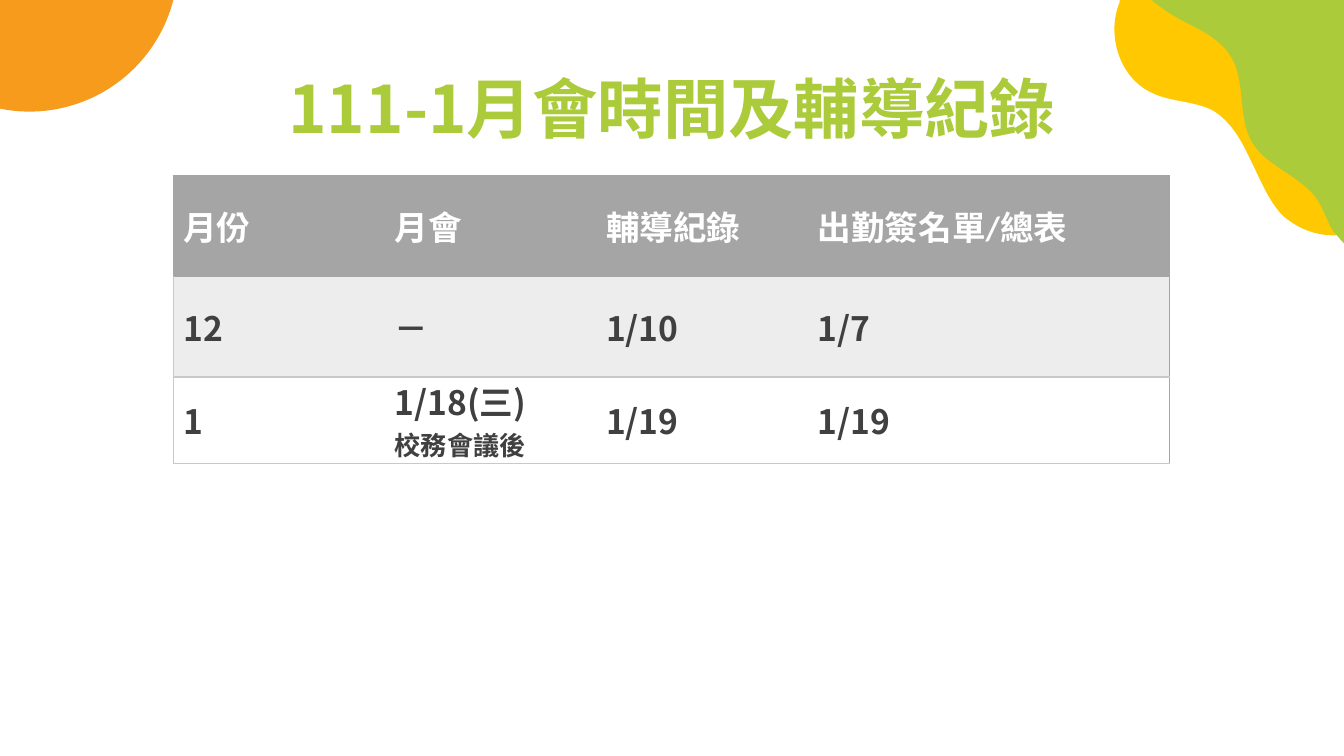
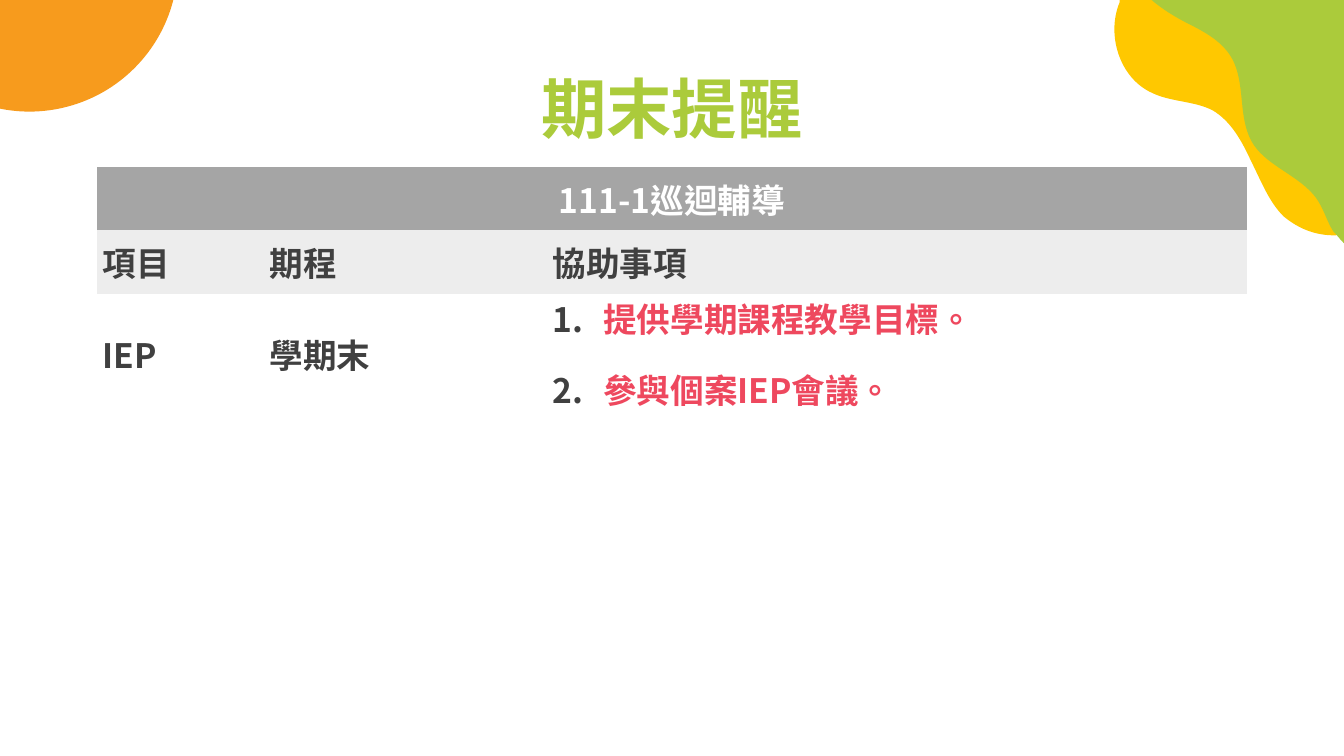
from dataclasses import dataclass

from pptx import Presentation
from pptx.dml.color import RGBColor as RGB
from pptx.enum.shapes import MSO_SHAPE as SHAPE
from pptx.enum.text import MSO_ANCHOR as ANCHOR, MSO_AUTO_SIZE as AUTOSIZE, PP_ALIGN as ALIGN
from pptx.oxml.ns import qn
from pptx.util import Pt
from lxml.etree import SubElement


@dataclass(frozen=True)
class Theme:
    green: str = "ABCB3B"
    yellow: str = "FFC800"
    orange: str = "F79B1D"
    gray: str = "A5A5A5"
    rule: str = "C9C9C9"
    band: str = "EDEDED"
    white: str = "FFFFFF"
    ink: str = "404040"
    red: str = "EE485E"
    noto: str = "Noto Sans CJK SC"
    calibri: str = "Calibri"
    title: int = 35
    body: int = 18
    small: int = 14
    no_style: str = "{2D5ABB26-0587-4C30-8999-92F81FD0307C}"


T = Theme()


def style_run(r, font, size, color):
    r.font.name, r.font.size, r.font.bold = font, Pt(size), True
    r.font.color.rgb = RGB.from_string(color)
    rPr = r._r.get_or_add_rPr()
    rPr.set("lang", "zh-TW")
    SubElement(rPr, qn("a:ea")).set("typeface", T.noto)


def fill_cell(cell, paragraphs, color, inset, align=ALIGN.JUSTIFY):
    """Each paragraph is a list of (text, font, size) runs."""
    cell.vertical_anchor = ANCHOR.MIDDLE
    cell.margin_left = cell.margin_right = Pt(inset)
    cell.margin_top = cell.margin_bottom = 0
    tf = cell.text_frame
    for i, runs in enumerate(paragraphs):
        p = tf.add_paragraph() if i else tf.paragraphs[0]
        p.alignment = align
        for text, font, size in runs:
            r = p.add_run()
            r.text = text
            style_run(r, font, size, color)


prs = Presentation()
prs.slide_width, prs.slide_height = Pt(720), Pt(405)
layout = prs.slide_layouts[5]

# Title position, shared through the layout
title = layout.placeholders[0]
title.left, title.top, title.width, title.height = Pt(57), Pt(34.9), Pt(606), Pt(45.4)

slides = []
for text in ("111-1月會時間及輔導紀錄", "期末提醒"):
    s = prs.slides.add_slide(layout)
    tf = s.shapes.title.text_frame
    tf.text = text
    tf.auto_size, tf.word_wrap, tf.vertical_anchor = AUTOSIZE.NONE, True, ANCHOR.MIDDLE
    tf.margin_left = tf.margin_right = tf.margin_top = tf.margin_bottom = Pt(7.2)
    p = tf.paragraphs[0]
    p.alignment = ALIGN.CENTER
    style_run(p.runs[0], T.noto, T.title, T.green)
    slides.append(s)
meeting, reminder = slides

# Corner blobs: start point, Bézier segments (two controls and an end), closing corners
blobs = [
    (T.yellow, (599.8, 0), [
        (599.8, 0.7, 599.8, 0.7, 599.8, 1.4), (592.6, 18.7, 599.8, 41.8, 617, 49.7),
        (627.1, 54.7, 639.4, 54, 649.4, 59), (659.5, 64.8, 665.3, 75.6, 670.3, 86.4),
        (675.4, 96.5, 679.7, 108, 687.6, 115.9), (696.2, 123.1, 706.3, 126.7, 717.1, 126),
        (717.8, 126, 719.3, 125.3, 720, 125.3)], [(720, 0)]),
    (T.green, (720, 0), [
        (622.8, 5, 630, 9.4, 637.2, 13), (644.4, 16.6, 652.3, 20.9, 657.4, 27.4),
        (668.9, 41.8, 661.7, 62.6, 671.8, 77.8), (679.7, 89.3, 696.2, 94.3, 704.9, 105.8),
        (709.2, 111.6, 710.6, 118.1, 714.2, 123.8), (716.4, 126, 717.8, 128.2, 720, 130.3)],
     [(617, 0)]),
]
decor = []
for color, start, curves, corners in blobs:
    # Green starts with its straight edge, yellow ends with it
    edge_first = color == T.green
    controls = [(c[k], c[k + 1]) for c in curves for k in (0, 2, 4)]
    points = corners + controls if edge_first else controls + corners
    builder = meeting.shapes.build_freeform(Pt(start[0]), Pt(start[1]))
    builder.add_line_segments([(Pt(x), Pt(y)) for x, y in points], close=True)
    sp = builder.convert_to_shape()
    # Every three control lines become one curve
    lines = list(sp.element.iter(qn("a:lnTo")))
    first = len(corners) if edge_first else 0
    for k in range(first, first + len(controls), 3):
        curve = SubElement(lines[k].getparent(), qn("a:cubicBezTo"))
        lines[k].addprevious(curve)
        for line in lines[k:k + 3]:
            curve.append(line[0])
            line.getparent().remove(line)
    decor.append((sp, color))

sun = meeting.shapes.add_shape(SHAPE.OVAL, Pt(-63.8), Pt(-99.4), Pt(159.2), Pt(159.2))
decor.append((sun, T.orange))

# The decoration belongs to the master, behind every slide
for sp, color in decor:
    sp.shadow.inherit = False
    sp.fill.solid()
    sp.fill.fore_color.rgb = RGB.from_string(color)
    sp.line.fill.background()
    prs.slide_master.shapes.element.append(sp.element)

# Tables without a built-in style
tables = []
for s, left, top, widths, heights in (
    (meeting, 93, 94.3, (113.3, 113.3, 113.3, 193.7), (53.8, 53.8, 12)),
    (reminder, 52, 89.5, (89.5, 151.7, 374.7), (34, 34, 62.5)),
):
    frame = s.shapes.add_table(len(heights), len(widths), Pt(left), Pt(top),
                               Pt(sum(widths)), Pt(sum(heights)))
    table = frame.table
    table.first_row = table.horz_banding = False
    table._tbl.find(".//" + qn("a:tableStyleId")).text = T.no_style
    for column, width in zip(table.columns, widths):
        column.width = Pt(width)
    for row, height in zip(table.rows, heights):
        row.height = Pt(height)
    tables.append(table)
schedule, tasks = tables

# Meeting schedule
schedule_rows = [
    [[[(text, T.calibri, T.body)]] for text in ("月份", "月會", "輔導紀錄", "出勤簽名單/總表")],
    [[[("12", T.noto, T.body)]], [[("－", T.calibri, T.body)]],
     [[("1/10", T.noto, T.body)]], [[("1/7", T.noto, T.body)]]],
    [[[("1", T.noto, T.body)]],
     [[("1/18(三)", T.noto, T.body)], [("校務會議後", T.calibri, T.small)]],
     [[("1/19", T.noto, T.body)]], [[("1/19", T.noto, T.body)]]],
]
row_looks = [  # text, fill, left, top and bottom border
    (T.white, T.gray, T.gray, T.gray, T.gray),
    (T.ink, T.band, T.rule, T.gray, T.rule),
    (T.ink, None, T.rule, T.rule, T.rule),
]
for i, (cells, look) in enumerate(zip(schedule_rows, row_looks)):
    color, fill, left, top, bottom = look
    for j, paragraphs in enumerate(cells):
        cell = schedule.cell(i, j)
        fill_cell(cell, paragraphs, color, 5.2)
        borders = {"a:lnL": left if j == 0 else None,
                   "a:lnR": T.gray if j == len(cells) - 1 else None,
                   "a:lnT": top, "a:lnB": bottom}
        for tag, border in borders.items():
            if border:
                ln = SubElement(cell._tc.get_or_add_tcPr(), qn(tag), w=str(Pt(1)),
                                cap="flat", cmpd="sng", algn="ctr")
                SubElement(SubElement(ln, qn("a:solidFill")), qn("a:srgbClr"), val=border)
                SubElement(ln, qn("a:prstDash"), val="solid")
        if fill:
            cell.fill.solid()
            cell.fill.fore_color.rgb = RGB.from_string(fill)
        else:
            cell.fill.background()

# End-of-term tasks
tasks.cell(0, 0).merge(tasks.cell(0, 2))
fill_cell(tasks.cell(0, 0), [[("111-1", T.noto, T.body), ("巡迴輔導", T.calibri, T.body)]],
          T.white, 3, ALIGN.CENTER)
for i, j, text, font in (
    (1, 0, "項目", T.calibri), (1, 1, "期程", T.noto), (1, 2, "協助事項", T.calibri),
    (2, 0, "IEP", T.noto), (2, 1, "學期末", T.noto),
):
    fill_cell(tasks.cell(i, j), [[(text, font, T.body)]], T.ink, 3)

duties = tasks.cell(2, 2)
fill_cell(duties, [[(text, T.noto, T.body)] for text in ("提供學期課程教學目標。", "參與個案IEP會議。")],
          T.red, 3, ALIGN.LEFT)
for p in duties.text_frame.paragraphs:
    p.space_before = Pt(12)
    pPr = p._p.get_or_add_pPr()
    pPr.set("marL", str(Pt(27)))
    pPr.set("indent", str(Pt(-27)))
    SubElement(SubElement(pPr, qn("a:buClr")), qn("a:srgbClr"), val=T.ink)
    SubElement(pPr, qn("a:buFont"), typeface=T.noto)
    SubElement(pPr, qn("a:buAutoNum"), type="arabicPeriod")

for i, fill in enumerate((T.gray, T.band, T.white)):
    for cell in tasks.rows[i].cells:
        cell.fill.solid()
        cell.fill.fore_color.rgb = RGB.from_string(fill)

prs.save("out.pptx")
